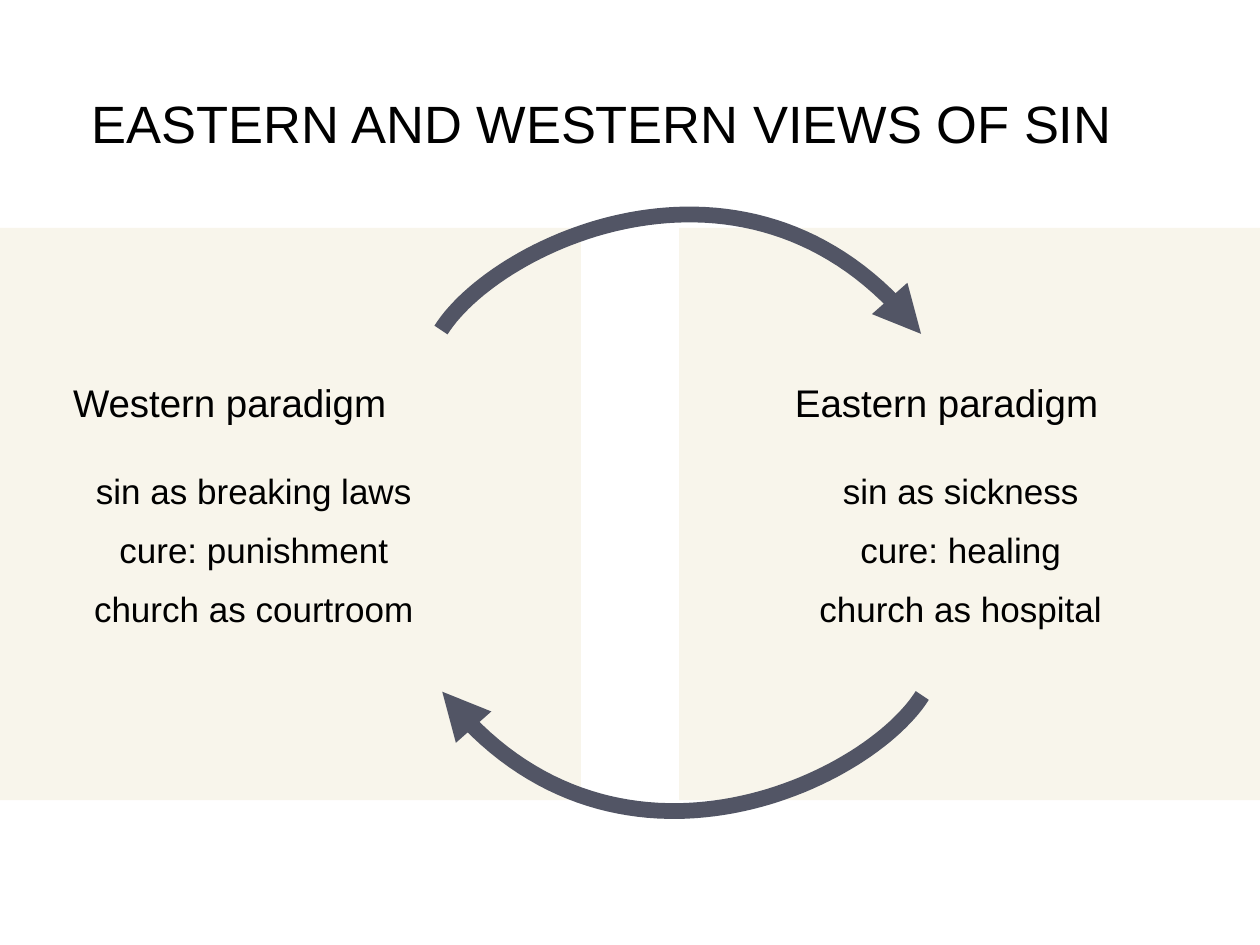
from dataclasses import dataclass

from lxml.etree import SubElement
from pptx import Presentation
from pptx.dml.color import RGBColor
from pptx.enum.shapes import MSO_SHAPE
from pptx.enum.text import MSO_ANCHOR, PP_ALIGN
from pptx.oxml.ns import qn
from pptx.util import Inches, Pt

Point = tuple[float, float]


@dataclass(frozen=True)
class Theme:
    font: str = "Arial"
    ink: RGBColor = RGBColor(0x00, 0x00, 0x00)
    panel: RGBColor = RGBColor(0xF8, 0xF5, 0xEB)
    arrow: RGBColor = RGBColor(0x52, 0x55, 0x65)
    title_size: float = 30
    heading_size: float = 22
    line_size: float = 20
    arrow_width: float = 9


@dataclass(frozen=True)
class Paradigm:
    panel_left: float
    heading_left: float
    lines_left: float
    heading: str
    lines: tuple[str, ...]


THEME = Theme()
WIDTH, HEIGHT = 10, 7.5
PANEL_TOP, PANEL_WIDTH, PANEL_HEIGHT = 1.81, 4.61, 4.54
TEXT_WIDTH, HEADING_HEIGHT, LINE_HEIGHT = 3.23, 0.39, 0.35
HEADING_TOP, LINES_TOP, LINE_PITCH = 2.97, 3.69, 0.47

PARADIGMS = (
    Paradigm(0, 0.58, 0.4, "Western paradigm",
             ("sin as breaking laws", "cure: punishment", "church as courtroom")),
    Paradigm(WIDTH - PANEL_WIDTH, 6.31, 6.01, "Eastern paradigm",
             ("sin as sickness", "cure: healing", "church as hospital")),
)

UPPER_CURVE: tuple[Point, ...] = ((3.5, 2.62), (3.94, 1.92), (5.99, 0.95), (7.31, 2.65))
CURVE_CENTER: Point = (5.41, 4.07)
CURVE_STEPS = 60


def write(tf, text: str, *, size: float, align=PP_ALIGN.LEFT,
          margin: float = 0, margin_top: float = 0) -> None:
    tf.word_wrap = True
    tf.vertical_anchor = MSO_ANCHOR.MIDDLE
    tf.margin_left = tf.margin_right = tf.margin_bottom = Inches(margin)
    tf.margin_top = Inches(margin_top)
    p = tf.paragraphs[0]
    p.alignment = align
    r = p.add_run()
    r.text = text
    r.font.name, r.font.size = THEME.font, Pt(size)
    r.font.color.rgb = THEME.ink


def add_title(s, text: str) -> None:
    sp = s.shapes.title
    sp.left, sp.top, sp.width, sp.height = map(Inches, (0.68, 0.38, 8.75, 1.19))
    write(sp.text_frame, text, size=THEME.title_size, margin=0.05, margin_top=0.05)


def add_panel(s, left: float) -> None:
    sp = s.shapes.add_shape(MSO_SHAPE.RECTANGLE, *map(
        Inches, (left, PANEL_TOP, PANEL_WIDTH, PANEL_HEIGHT)))
    sp.shadow.inherit = False
    sp.fill.solid()
    sp.fill.fore_color.rgb = THEME.panel
    sp.line.fill.background()


def add_label(s, text: str, left: float, top: float, height: float, **fmt) -> None:
    sp = s.shapes.add_textbox(*map(Inches, (left, top, TEXT_WIDTH, height)))
    write(sp.text_frame, text, margin_top=0.05, **fmt)


def add_paradigm_text(s, paradigm: Paradigm) -> None:
    add_label(s, paradigm.heading, paradigm.heading_left, HEADING_TOP,
              HEADING_HEIGHT, size=THEME.heading_size)
    for row, line in enumerate(paradigm.lines):
        add_label(s, line, paradigm.lines_left, LINES_TOP + row * LINE_PITCH,
                  LINE_HEIGHT, size=THEME.line_size, align=PP_ALIGN.CENTER)


def bezier(controls: tuple[Point, ...], t: float) -> Point:
    """Return the point at share t of a cubic curve."""
    u = 1 - t
    weights = (u ** 3, 3 * u * u * t, 3 * u * t * t, t ** 3)
    x, y = (sum(w * c[axis] for w, c in zip(weights, controls)) for axis in (0, 1))
    return x, y


def half_turn(points: tuple[Point, ...], center: Point) -> tuple[Point, ...]:
    return tuple((2 * center[0] - x, 2 * center[1] - y) for x, y in points)


def add_curved_arrow(s, controls: tuple[Point, ...]) -> None:
    start, *rest = [(Inches(x), Inches(y)) for x, y in (
        bezier(controls, i / CURVE_STEPS) for i in range(CURVE_STEPS + 1))]
    builder = s.shapes.build_freeform(*start)
    builder.add_line_segments(rest, close=False)
    sp = builder.convert_to_shape()
    sp.shadow.inherit = False
    sp.fill.background()
    sp.line.color.rgb = THEME.arrow
    sp.line.width = Pt(THEME.arrow_width)
    ln = sp.line.fill._xPr
    SubElement(ln, qn("a:round"))
    SubElement(ln, qn("a:tailEnd"), type="triangle")


def main() -> None:
    prs = Presentation()
    prs.slide_width, prs.slide_height = Inches(WIDTH), Inches(HEIGHT)
    s = prs.slides.add_slide(prs.slide_layouts[0])
    subtitle = s.placeholders[1].element
    subtitle.getparent().remove(subtitle)

    for paradigm in PARADIGMS:
        add_panel(s, paradigm.panel_left)
    add_title(s, "EASTERN AND WESTERN VIEWS OF SIN")
    for paradigm in PARADIGMS:
        add_paradigm_text(s, paradigm)
    for controls in (UPPER_CURVE, half_turn(UPPER_CURVE, CURVE_CENTER)):
        add_curved_arrow(s, controls)
    prs.save("out.pptx")


if __name__ == "__main__":
    main()
